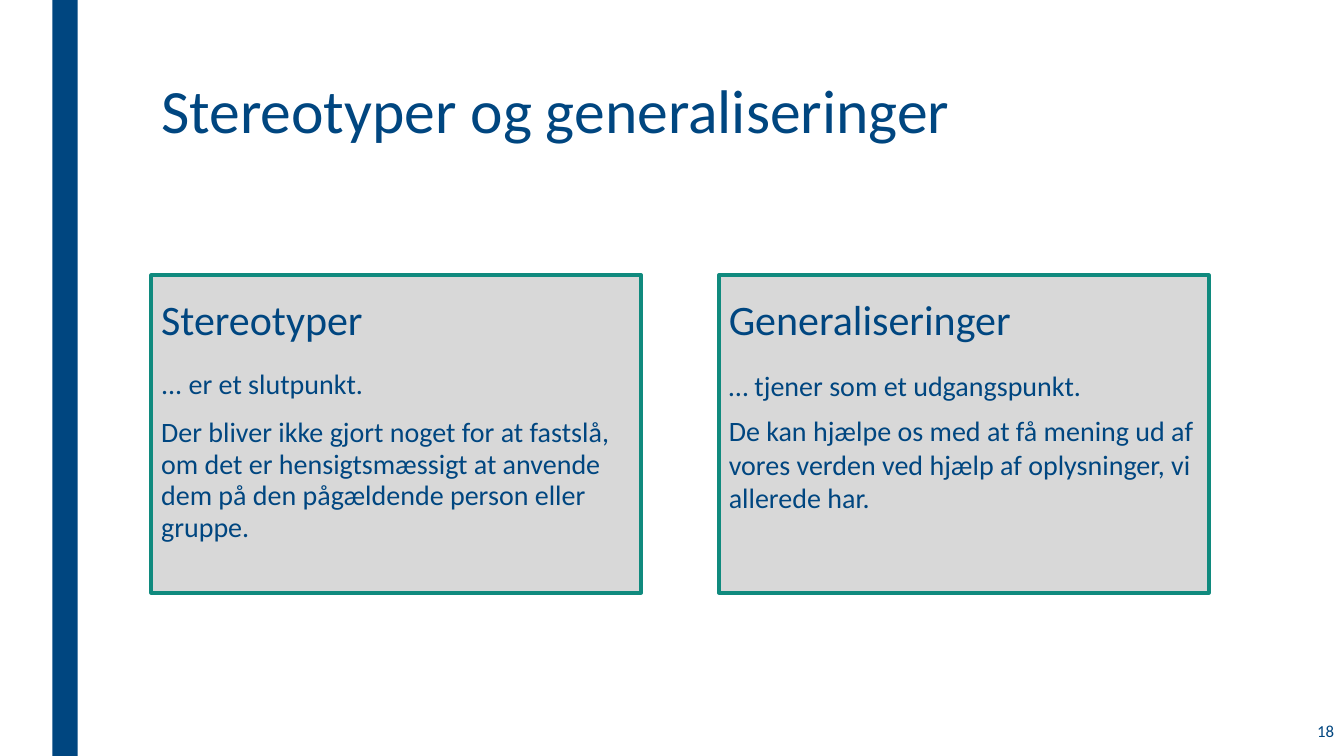
from dataclasses import dataclass

from pptx import Presentation
from pptx.dml.color import RGBColor
from pptx.enum import shapes, text
from pptx.util import Inches, Pt


@dataclass(frozen=True)
class Theme:
    font: str = "Calibri"
    navy: RGBColor = RGBColor(0x00, 0x46, 0x80)
    teal: RGBColor = RGBColor(0x10, 0x8A, 0x7E)
    grey: RGBColor = RGBColor(0xD8, 0xD8, 0xD8)
    title: int = 44
    heading: int = 30
    body: int = 20
    number: int = 12
    border: float = 2.75


class SlideBuilder:
    def __init__(self, slide, theme):
        self.slide = slide
        self.theme = theme

    def rectangle(self, bounds, fill, line=None):
        shape = self.slide.shapes.add_shape(
            shapes.MSO_SHAPE.RECTANGLE, *map(Inches, bounds))
        shape.shadow.inherit = False
        shape.fill.solid()
        shape.fill.fore_color.rgb = fill
        if line is None:
            shape.line.fill.background()
        else:
            shape.line.color.rgb = line
            shape.line.width = Pt(self.theme.border)

    def text_box(self, bounds, paragraphs, size,
                 anchor=text.MSO_ANCHOR.TOP, before=0, **formats):
        frame = self.slide.shapes.add_textbox(*map(Inches, bounds)).text_frame
        frame.word_wrap = True
        frame.vertical_anchor = anchor
        for index, words in enumerate(paragraphs):
            paragraph = frame.add_paragraph() if index else frame.paragraphs[0]
            paragraph.text = words
            paragraph.space_before = Pt(before if index else 0)
            for name, value in formats.items():
                setattr(paragraph, name, value)
            font = paragraph.runs[0].font
            font.color.rgb = self.theme.navy
            for name, value in {"name": self.theme.font, "size": Pt(size)}.items():
                setattr(font, name, value)

    def panel(self, left, heading, paragraphs, before, line_spacing):
        width = 4.86
        self.rectangle((left, 2.73, width, 3.15), self.theme.grey, self.theme.teal)
        self.text_box((left, 2.56, width, 0.9), [heading], self.theme.heading,
                      anchor=text.MSO_ANCHOR.BOTTOM, line_spacing=0.84)
        self.text_box((left, 3.61, width, 2.8), paragraphs, self.theme.body,
                      before=before, space_after=Pt(2), line_spacing=line_spacing)


def main():
    presentation = Presentation()
    presentation.slide_width = Inches(13.33)
    presentation.slide_height = Inches(7.5)
    theme = Theme()
    slide = presentation.slides.add_slide(presentation.slide_layouts[6])
    builder = SlideBuilder(slide, theme)

    builder.rectangle((0.52, 0, 0.25, 7.5), theme.navy)
    builder.text_box((1.5, 0.75, 10.5, 0.8), ["Stereotyper og generaliseringer"],
                     theme.title, line_spacing=0.89)
    builder.panel(1.5, "Stereotyper", [
        "... er et slutpunkt.",
        "Der bliver ikke gjort noget for at fastslå, om det er hensigtsmæssigt "
        "at anvende dem på den pågældende person eller gruppe.",
    ], before=10, line_spacing=0.94)
    builder.panel(7.13, "Generaliseringer", [
        "… tjener som et udgangspunkt.",
        "De kan hjælpe os med at få mening ud af vores verden ved hjælp af "
        "oplysninger, vi allerede har.",
    ], before=6, line_spacing=1.0)
    builder.text_box((11.58, 7.03, 1.75, 0.44), ["18"], theme.number,
                     anchor=text.MSO_ANCHOR.MIDDLE, alignment=text.PP_ALIGN.RIGHT)

    presentation.save("out.pptx")


if __name__ == "__main__":
    main()
